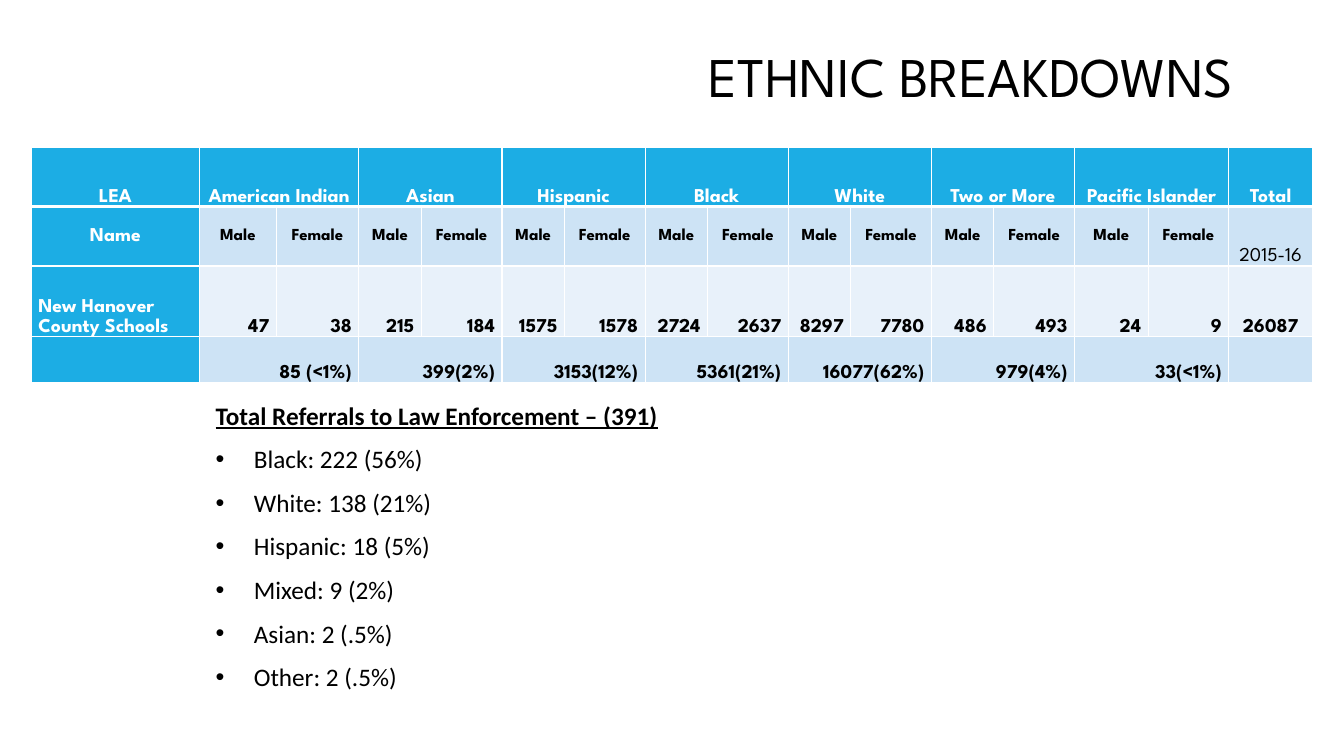
from dataclasses import dataclass

import lxml.etree
import pptx
import pptx.dml.color
import pptx.enum.text
import pptx.oxml.ns
import pptx.util

Inches = pptx.util.Inches
Pt = pptx.util.Pt
RGBColor = pptx.dml.color.RGBColor
Align = pptx.enum.text.PP_ALIGN
Anchor = pptx.enum.text.MSO_ANCHOR
qn = pptx.oxml.ns.qn

BLUE = RGBColor(0x1C, 0xAD, 0xE4)
BAND_DARK = RGBColor(0xCD, 0xE3, 0xF5)
BAND_LIGHT = RGBColor(0xE8, 0xF1, 0xFA)
WHITE = RGBColor(0xFF, 0xFF, 0xFF)
BLACK = RGBColor(0x00, 0x00, 0x00)
HEADING_FONT = "League Spartan"
BODY_FONT = "Calibri"


@dataclass(frozen=True)
class Group:
    name: str
    male: str
    female: str
    both: str


@dataclass(frozen=True)
class CellStyle:
    fill: RGBColor
    color: RGBColor = BLACK
    align: Align = Align.CENTER
    anchor: Anchor = Anchor.BOTTOM
    size: int = 14
    bold: bool = True


GROUPS = [
    Group("American Indian", "47", "38", "85 (<1%)"),
    Group("Asian", "215", "184", "399(2%)"),
    Group("Hispanic", "1575", "1578", "3153(12%)"),
    Group("Black", "2724", "2637", "5361(21%)"),
    Group("White", "8297", "7780", "16077(62%)"),
    Group("Two or More", "486", "493", "979(4%)"),
    Group("Pacific Islander", "24", "9", "33(<1%)"),
]
REFERRALS = [
    "Black: 222 (56%)",
    "White: 138 (21%)",
    "Hispanic: 18 (5%)",
    "Mixed: 9 (2%)",
    "Asian: 2 (.5%)",
    "Other: 2 (.5%)",
]
COLUMN_WIDTHS = [1.67, 0.76, 0.82] + [0.62, 0.8] * 5 + [0.73, 0.8, 0.83]
ROW_HEIGHTS = [0.59, 0.59, 0.7, 0.46]

HEADER = CellStyle(BLUE, WHITE)
LEA_NAME = CellStyle(BLUE, WHITE, anchor=Anchor.MIDDLE)
SCHOOLS = CellStyle(BLUE, WHITE, Align.LEFT)
GENDER = CellStyle(BAND_DARK, anchor=Anchor.MIDDLE, size=12)
YEAR = CellStyle(BAND_DARK, bold=False)
COUNT = CellStyle(BAND_LIGHT, align=Align.RIGHT)
GRAND_TOTAL = CellStyle(BAND_LIGHT)
SUBTOTAL = CellStyle(BAND_DARK, align=Align.RIGHT)


def format_runs(paragraph, font_name: str, size: int, color: RGBColor,
                bold: bool = False, underline: bool = False) -> None:
    for run in paragraph.runs:
        run.font.name = font_name
        run.font.size = Pt(size)
        run.font.color.rgb = color
        run.font.bold = bold
        run.font.underline = underline


def add_borders(cell, top: int, bottom: int) -> None:
    properties = cell._tc.get_or_add_tcPr()
    widths = {"a:lnL": 1, "a:lnR": 1, "a:lnT": top, "a:lnB": bottom}
    for position, (side, width) in enumerate(widths.items()):
        line = lxml.etree.Element(qn(side), w=str(Pt(width)))
        fill = lxml.etree.SubElement(line, qn("a:solidFill"))
        lxml.etree.SubElement(fill, qn("a:srgbClr"), val=str(WHITE))
        properties.insert(position, line)


def fill_cell(table, row: int, column: int, text: str, style: CellStyle,
              span: int = 1) -> None:
    cell = table.cell(row, column)
    if span > 1:
        cell.merge(table.cell(row, column + span - 1))
    cell.margin_left = cell.margin_right = Inches(0.07)
    cell.margin_top = cell.margin_bottom = 0
    cell.vertical_anchor = style.anchor
    cell.text_frame.text = text
    paragraph = cell.text_frame.paragraphs[0]
    paragraph.alignment = style.align
    paragraph.line_spacing = 1.07
    format_runs(paragraph, HEADING_FONT, style.size, style.color, style.bold)
    for offset in range(span):
        part = table.cell(row, column + offset)
        part.fill.solid()
        part.fill.fore_color.rgb = style.fill
        add_borders(part, 3 if row == 1 else 1, 3 if row == 0 else 1)


def add_title(slide) -> None:
    box = slide.shapes.add_textbox(Inches(1), Inches(-0.09), Inches(11.33), Inches(1.75))
    frame = box.text_frame
    frame.word_wrap = True
    frame.vertical_anchor = Anchor.MIDDLE
    frame.text = "ETHNIC BREAKDOWNS"
    title = frame.paragraphs[0]
    title.alignment = Align.RIGHT
    title.line_spacing = 0.9
    format_runs(title, HEADING_FONT, 40, BLACK)


def add_enrollment_table(slide) -> None:
    table = slide.shapes.add_table(
        len(ROW_HEIGHTS), len(COLUMN_WIDTHS), Inches(0.31), Inches(1.46),
        Inches(sum(COLUMN_WIDTHS)), Inches(sum(ROW_HEIGHTS))).table
    for column, width in zip(table.columns, COLUMN_WIDTHS):
        column.width = Inches(width)
    for row, height in zip(table.rows, ROW_HEIGHTS):
        row.height = Inches(height)

    # First and last columns
    total = len(COLUMN_WIDTHS) - 1
    names = [("LEA", HEADER), ("Name", LEA_NAME),
             ("New Hanover County Schools", SCHOOLS), ("", SCHOOLS)]
    totals = [("Total", HEADER), ("2015-16", YEAR), ("26087", GRAND_TOTAL), ("", SUBTOTAL)]
    for column, entries in ((0, names), (total, totals)):
        for row, (text, style) in enumerate(entries):
            fill_cell(table, row, column, text, style)

    # A pair of columns for each group
    for index, group in enumerate(GROUPS):
        male = 1 + 2 * index
        fill_cell(table, 0, male, group.name, HEADER, span=2)
        fill_cell(table, 1, male, "Male", GENDER)
        fill_cell(table, 1, male + 1, "Female", GENDER)
        fill_cell(table, 2, male, group.male, COUNT)
        fill_cell(table, 2, male + 1, group.female, COUNT)
        fill_cell(table, 3, male, group.both, SUBTOTAL, span=2)


def add_bullet(paragraph) -> None:
    properties = paragraph._p.get_or_add_pPr()
    properties.set("marL", str(Inches(0.38)))
    properties.set("indent", str(Inches(-0.38)))
    lxml.etree.SubElement(properties, qn("a:buFont"), typeface="Arial")
    lxml.etree.SubElement(properties, qn("a:buChar"), char="•")
    tabs = lxml.etree.SubElement(properties, qn("a:tabLst"))
    lxml.etree.SubElement(tabs, qn("a:tab"), pos=str(Inches(0.5)), algn="l")


def add_referrals(slide) -> None:
    box = slide.shapes.add_textbox(Inches(2.04), Inches(3.9), Inches(6.67), Inches(3.04))
    frame = box.text_frame
    frame.word_wrap = True
    frame.auto_size = pptx.enum.text.MSO_AUTO_SIZE.SHAPE_TO_FIT_TEXT
    frame.text = "\n".join(["Total Referrals to Law Enforcement – (391)"] + REFERRALS)
    for index, paragraph in enumerate(frame.paragraphs):
        heading = index == 0
        paragraph.line_spacing = 1.07
        paragraph.space_after = Pt(8)
        if not heading:
            add_bullet(paragraph)
        format_runs(paragraph, BODY_FONT, 18, BLACK, bold=heading, underline=heading)


def main() -> None:
    presentation = pptx.Presentation()
    presentation.slide_width = Inches(13.33)
    presentation.slide_height = Inches(7.5)
    slide = presentation.slides.add_slide(presentation.slide_layouts[6])
    add_title(slide)
    add_enrollment_table(slide)
    add_referrals(slide)
    presentation.save("out.pptx")


if __name__ == "__main__":
    main()
